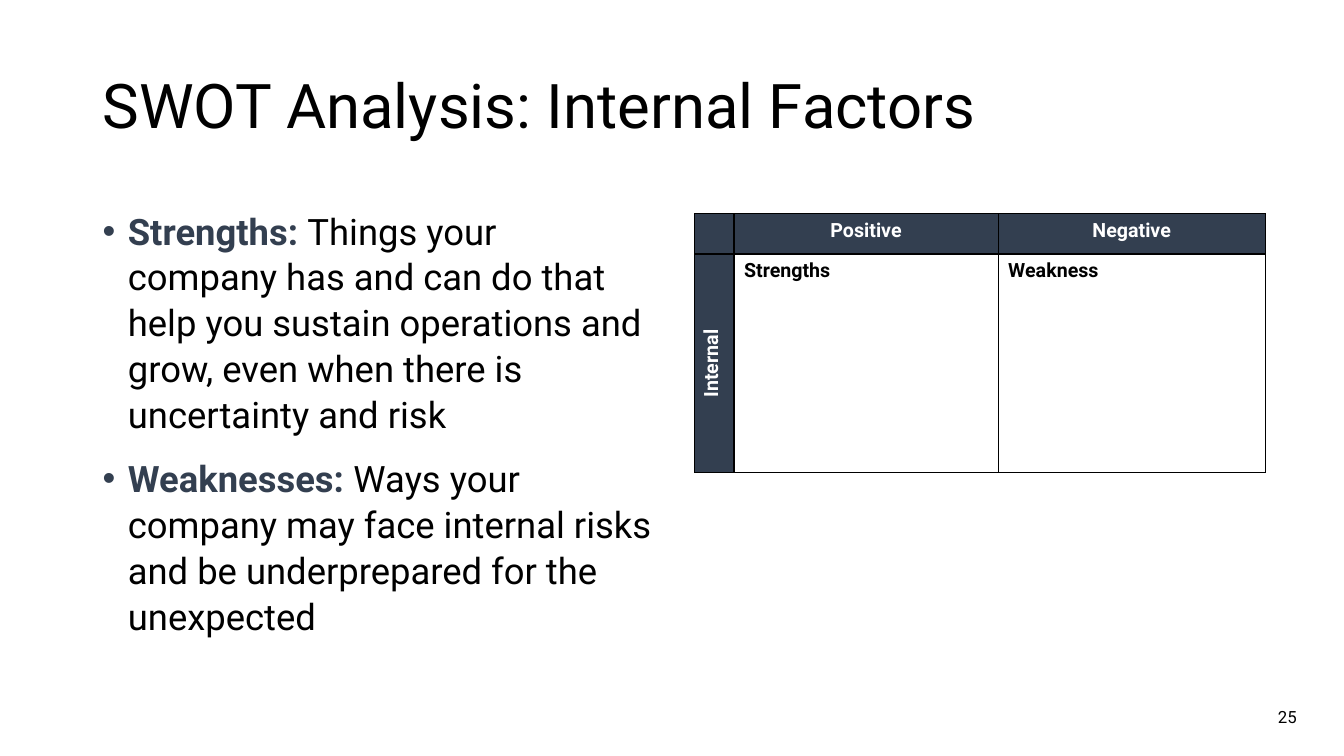
"""Build the SWOT internal factors slide."""
from lxml.etree import SubElement
from pptx import Presentation
from pptx.dml.color import RGBColor
from pptx.enum.text import MSO_ANCHOR as Anchor, PP_ALIGN as Align
from pptx.oxml.ns import qn
from pptx.util import Inches, Pt

NAVY, BLACK, WHITE = "333F50", "000000", "FFFFFF"
TITLE = "SWOT Analysis: Internal Factors"
FACTORS = [
    ("Strengths: ", "Things your company has and can do that help you sustain "
     "operations and grow, even when there is uncertainty and risk"),
    ("Weaknesses: ", "Ways your company may face internal risks and be "
     "underprepared for the unexpected"),
]
GRID = [["", "Positive", "Negative"], ["Internal", "Strengths", "Weakness"]]
COLUMNS = [0.39, 2.62, 2.65]
ROWS = [0.36, 2.17]
PAGE_NUMBER = "25"


def color(value):
    return RGBColor.from_string(value)


def set_all(target, **values):
    for name, value in values.items():
        setattr(target, name, value)


def add_span(para, text, size, ink, bold=False):
    span = para.add_run()
    span.text = text
    set_all(span.font, name="Roboto", size=Pt(size), bold=bold)
    span.font.color.rgb = color(ink)


def add_box(page, place, anchor):
    frame = page.shapes.add_textbox(*map(Inches, place)).text_frame
    set_all(frame, word_wrap=True, vertical_anchor=anchor)
    return frame


def add_bullet(para):
    props = para._p.get_or_add_pPr()
    props.set("marL", str(Inches(0.25)))
    props.set("indent", str(-Inches(0.25)))
    SubElement(props, qn("a:buFont"), typeface="Arial")
    SubElement(props, qn("a:buChar"), char="•")


def add_factors(page):
    frame = add_box(page, (0.92, 2, 5.67, 4.76), Anchor.TOP)
    for index, (label, text) in enumerate(FACTORS):
        para = frame.add_paragraph() if index else frame.paragraphs[0]
        add_bullet(para)
        set_all(para, line_spacing=1.05, space_before=Pt(10 if index else 0),
                space_after=Pt(3))
        add_span(para, label, 26, NAVY, True)
        add_span(para, text, 26, BLACK)


def add_borders(cell):
    props = cell._tc.get_or_add_tcPr()
    for index, side in enumerate(("lnL", "lnR", "lnT", "lnB")):
        line = props.makeelement(qn("a:" + side), {"w": str(Pt(1))})
        fill = SubElement(line, qn("a:solidFill"))
        SubElement(fill, qn("a:srgbClr"), val=BLACK)
        props.insert(index, line)


def add_matrix(page):
    table = page.shapes.add_table(
        len(ROWS), len(COLUMNS), Inches(6.89), Inches(2.12),
        Inches(sum(COLUMNS)), Inches(sum(ROWS))).table
    for column, width in zip(table.columns, COLUMNS):
        column.width = Inches(width)
    for row, height in zip(table.rows, ROWS):
        row.height = Inches(height)
    for r, texts in enumerate(GRID):
        for c, text in enumerate(texts):
            cell = table.cell(r, c)
            header = r == 0 or c == 0
            cell.fill.solid()
            cell.fill.fore_color.rgb = color(NAVY if header else WHITE)
            add_borders(cell)
            para = cell.text_frame.paragraphs[0]
            para.alignment = Align.CENTER if header else Align.LEFT
            if text:
                add_span(para, text, 14, WHITE if header else BLACK, True)
    table.cell(1, 0)._tc.get_or_add_tcPr().set("vert", "vert270")


def main():
    deck = Presentation()
    set_all(deck, slide_width=Inches(13.33), slide_height=Inches(7.5))
    page = deck.slides.add_slide(deck.slide_layouts[6])
    title = add_box(page, (0.92, 0.01, 11.5, 1.45), Anchor.BOTTOM).paragraphs[0]
    title.line_spacing = 0.9
    add_span(title, TITLE, 44, BLACK)
    add_factors(page)
    add_matrix(page)
    number = add_box(page, (9.96, 6.91, 3, 0.4), Anchor.MIDDLE).paragraphs[0]
    number.alignment = Align.RIGHT
    add_span(number, PAGE_NUMBER, 12, BLACK)
    deck.save("out.pptx")


if __name__ == "__main__":
    main()
